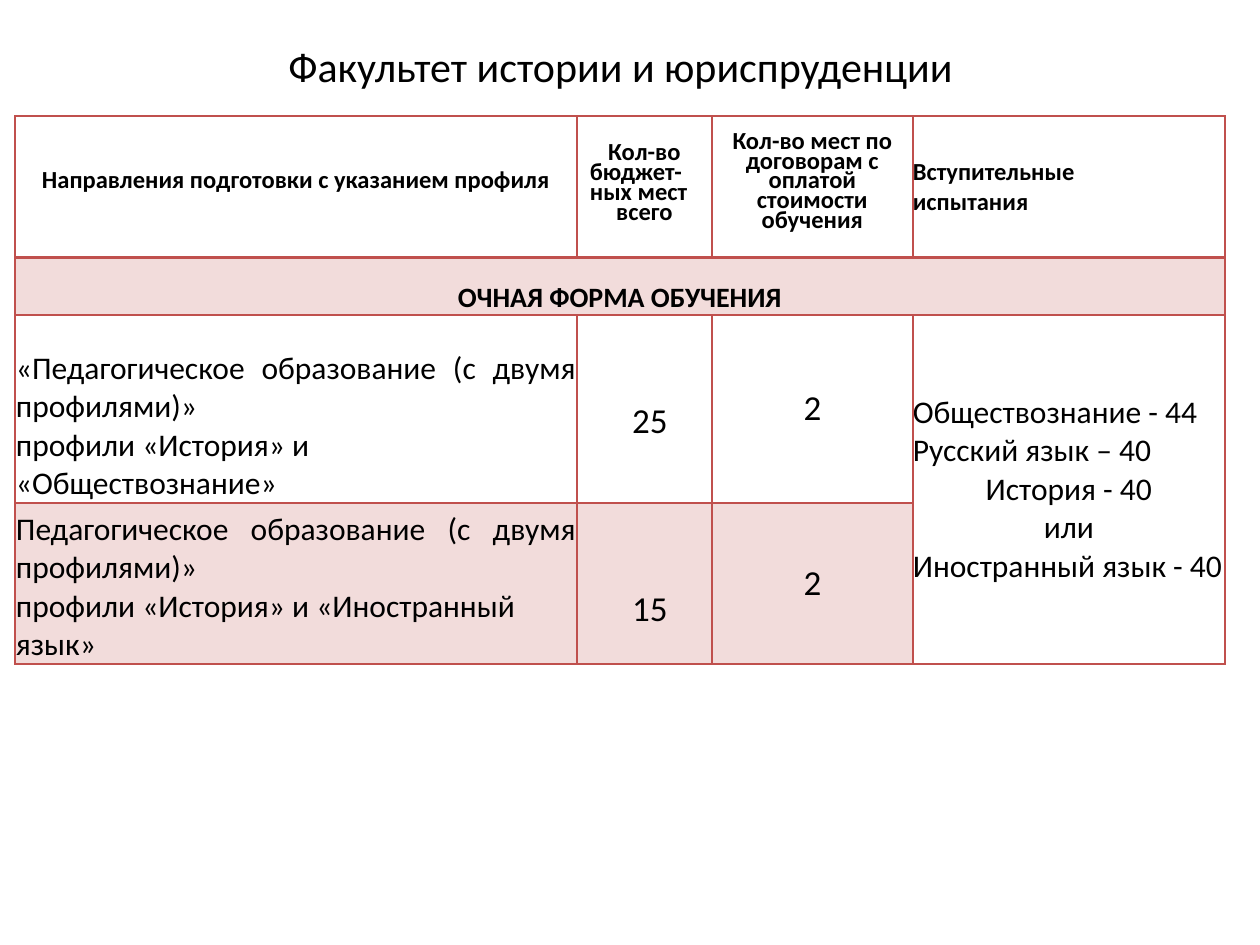
from lxml import etree
from pptx import Presentation
from pptx.dml.color import RGBColor
from pptx.enum.text import MSO_ANCHOR as Anchor, PP_ALIGN as Align
from pptx.oxml.ns import qn
from pptx.util import Pt

PX = 914400 // 126
BLACK, RED, PINK = "000000", "C0504D", "F2DCDB"
COLUMNS = [562, 135, 201, 312]
ROWS = [142, 57, 188, 161]
NUMBER_TOP = 85


def px(length):
    return round(length * PX)


def paint(color_format, color):
    color_format.rgb = RGBColor.from_string(color)


def write(frame, lines, size, bold=False, spacing=None):
    """Write (text, alignment) lines, one paragraph each."""
    for index, (text, alignment) in enumerate(lines):
        paragraph = frame.paragraphs[0] if index == 0 else frame.add_paragraph()
        paragraph.alignment = alignment
        if spacing:
            paragraph.line_spacing = Pt(spacing)
        run = paragraph.add_run()
        run.text = text
        run.font.name = "Calibri"
        run.font.size = Pt(size)
        run.font.bold = bold
        paint(run.font.color, BLACK)


def add_title(slide, left, top, width, height):
    frame = slide.shapes.add_textbox(px(left), px(top), px(width), px(height)).text_frame
    frame.word_wrap = True
    frame.vertical_anchor = Anchor.MIDDLE
    write(frame, [("Факультет истории и юриспруденции", Align.CENTER)], 24)


def add_borders(cell, bottom_width):
    properties = cell._tc.get_or_add_tcPr()
    for side, width in (("L", 1), ("R", 1), ("T", 1), ("B", bottom_width)):
        line = etree.SubElement(properties, qn(f"a:ln{side}"), w=str(Pt(width)))
        fill = etree.SubElement(line, qn("a:solidFill"))
        etree.SubElement(fill, qn("a:srgbClr"), val=RED)


def format_cell(cell, bottom_width, color):
    cell.margin_left = cell.margin_right = px(1)
    cell.margin_top = cell.margin_bottom = 0
    cell.vertical_anchor = Anchor.MIDDLE
    add_borders(cell, bottom_width)
    if color:
        cell.fill.solid()
        paint(cell.fill.fore_color, color)
    else:
        cell.fill.background()


def fill_header(table):
    program, budget, contract, exams = table.rows[0].cells
    write(program.text_frame,
          [("Направления подготовки с указанием профиля", Align.CENTER)], 14, True, 9.5)
    write(budget.text_frame,
          [("Кол-во", Align.CENTER), ("бюджет-ных мест", Align.LEFT), ("всего", Align.CENTER)],
          14, True, 11.3)
    budget.text_frame.paragraphs[1]._p.get_or_add_pPr().set("marL", str(px(12)))
    contract.vertical_anchor = Anchor.TOP
    contract.margin_top = px(20)
    write(contract.text_frame,
          [("Кол-во мест по договорам с оплатой стоимости обучения", Align.CENTER)],
          14, True, 11.3)
    exams.margin_left = exams.margin_right = 0
    write(exams.text_frame,
          [("Вступительные", Align.LEFT), ("испытания", Align.LEFT)], 14, True)


def fill_program(row, name, profiles, budget_places, contract_places):
    program, budget, contract = list(row.cells)[:3]
    program.vertical_anchor = Anchor.BOTTOM
    write(program.text_frame, [(name, Align.JUSTIFY), (profiles, Align.LEFT)], 18)
    budget.vertical_anchor = Anchor.TOP
    budget.margin_top = px(NUMBER_TOP)
    budget.margin_left = px(12)
    write(budget.text_frame, [(budget_places, Align.CENTER)], 20)
    write(contract.text_frame, [(contract_places, Align.CENTER)], 20)


def add_admission_table(slide, left, top):
    table = slide.shapes.add_table(
        len(ROWS), len(COLUMNS), px(left), px(top), px(sum(COLUMNS)), px(sum(ROWS))).table
    table.first_row = table.horz_banding = False
    for column, width in zip(table.columns, COLUMNS):
        column.width = px(width)
    for index, (row, height) in enumerate(zip(table.rows, ROWS)):
        row.height = px(height)
        for position, cell in enumerate(row.cells):
            shaded = index == 1 or (index == 3 and position < 3)
            format_cell(cell, 2 if index == 0 else 1, PINK if shaded else None)

    fill_header(table)

    study_form = table.cell(1, 0)
    study_form.merge(table.cell(1, 3))
    study_form.vertical_anchor = Anchor.BOTTOM
    write(study_form.text_frame, [("ОЧНАЯ ФОРМА ОБУЧЕНИЯ", Align.CENTER)], 16, True)

    fill_program(table.rows[2], "«Педагогическое образование (с двумя профилями)»",
                 "профили «История» и «Обществознание»", "25", "2")
    fill_program(table.rows[3], "Педагогическое образование (с двумя профилями)»",
                 "профили «История» и «Иностранный язык»", "15", "2")

    exams = table.cell(2, 3)
    exams.merge(table.cell(3, 3))
    exams.margin_left = exams.margin_right = 0
    write(exams.text_frame, [
        ("Обществознание - 44", Align.LEFT),
        ("Русский язык – 40", Align.LEFT),
        ("История - 40", Align.CENTER),
        ("или", Align.CENTER),
        ("Иностранный язык - 40", Align.LEFT),
    ], 18)


def main():
    presentation = Presentation()
    presentation.slide_width = px(1260)
    presentation.slide_height = px(945)
    slide = presentation.slides.add_slide(presentation.slide_layouts[6])
    add_title(slide, 25, 16, 1191, 100)
    add_admission_table(slide, 15, 116)
    presentation.save("out.pptx")


if __name__ == "__main__":
    main()
